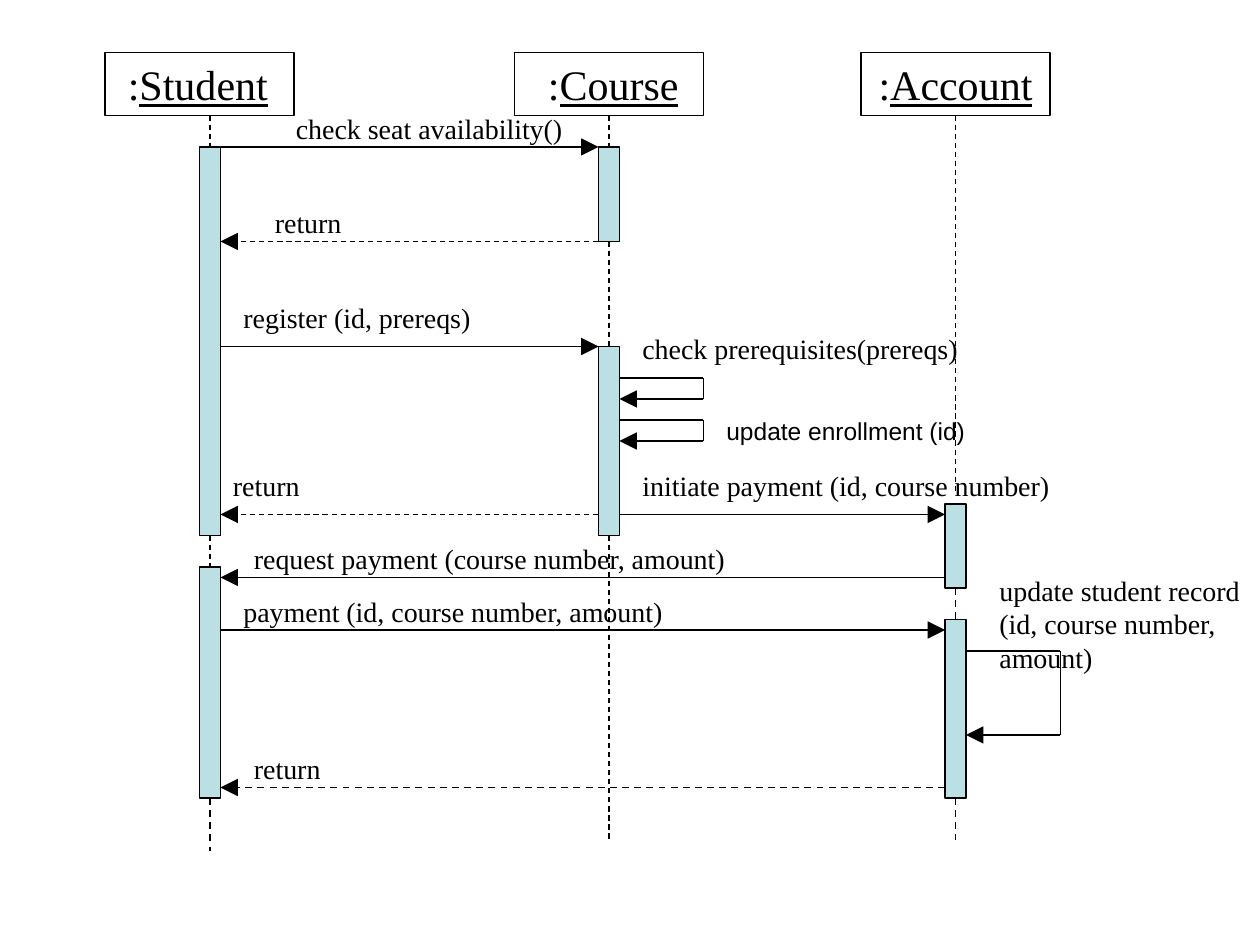
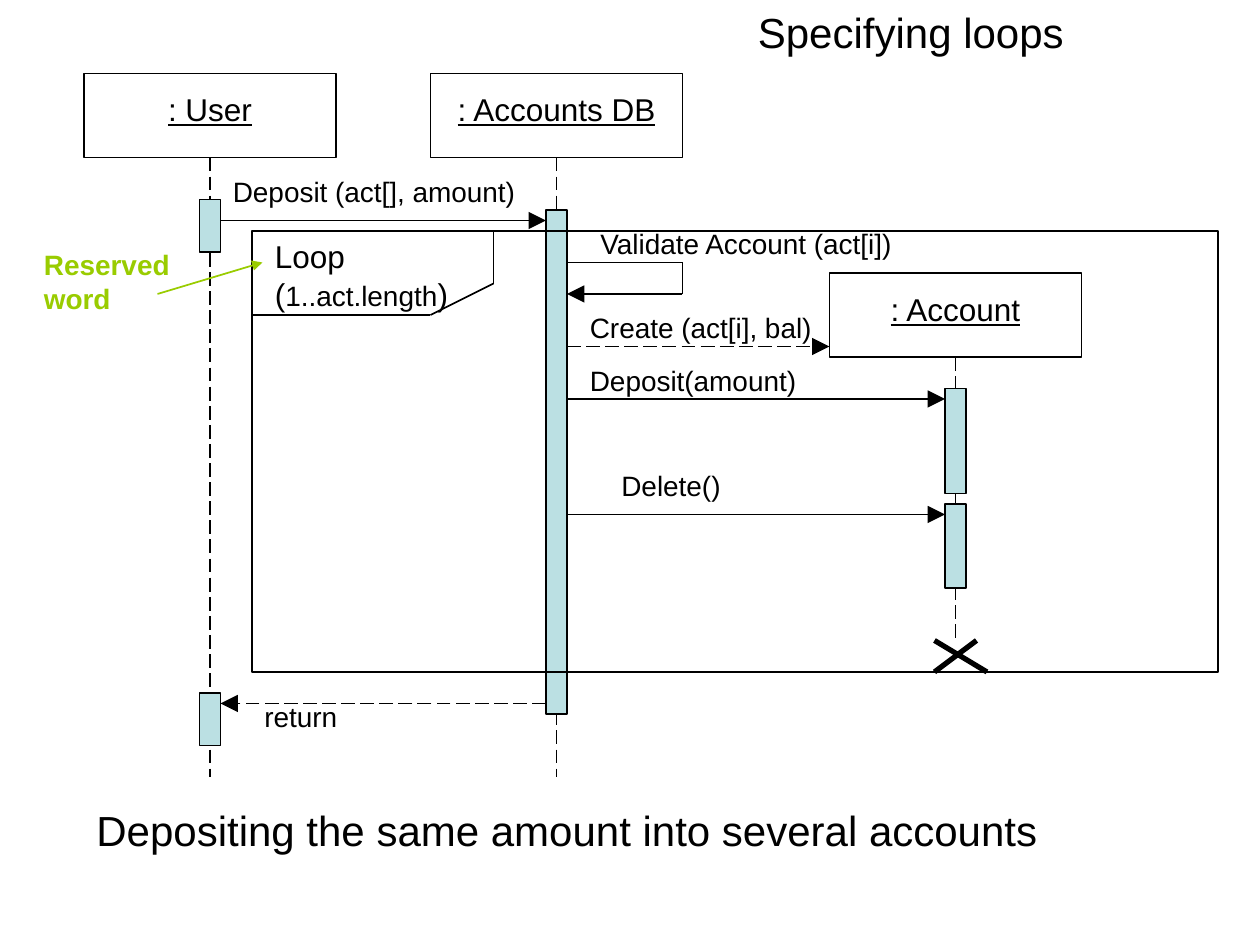
from dataclasses import dataclass
from typing import NamedTuple

from lxml import etree
from pptx import Presentation
from pptx import util as u
from pptx.dml import color
from pptx.enum import dml, shapes, text
from pptx.oxml import ns

SCALE = 9525
BAR_WIDTH = 16
DASH = dml.MSO_LINE.DASH
LONG_DASH = dml.MSO_LINE.LONG_DASH
SIDES = ((0.5, 0), (0, 0.5), (0.5, 1), (1, 0.5))


@dataclass(frozen=True)
class Theme:
    ink: str = "000000"
    bar: str = "BBE0E3"
    accent: str = "99CC00"
    serif: str = "Times New Roman"
    sans: str = "Arial"
    title: int = 24
    head: int = 18
    note: int = 16
    small: int = 14
    hairline: float = 0.75
    line: float = 1
    cross: float = 3


THEME = Theme()


class Box(NamedTuple):
    left: int
    top: int
    width: int
    height: int


def px(value):
    return u.Emu(value * SCALE)


def rgb(value):
    return color.RGBColor.from_string(value)


def assign(target, values):
    for name, value in values.items():
        setattr(target, name, value)


class Canvas:
    def __init__(self, page, box, font, weight, dash, sites=None):
        self.page = page
        self.box = box
        self.font = font
        self.weight = weight
        self.dash = dash
        self.sites = {} if sites is None else sites

    def inside(self, box):
        placed = Box(*self.point(box.left, box.top), box.width, box.height)
        return Canvas(self.page, placed, self.font, self.weight, self.dash, self.sites)

    def point(self, x, y):
        return self.box.left + x, self.box.top + y

    def frame(self, box):
        return [px(value) for value in (*self.point(box.left, box.top), box.width, box.height)]

    def rectangle(self, box, fill=None, weight=None):
        shape = self.page.shapes.add_shape(shapes.MSO_SHAPE.RECTANGLE, *self.frame(box))
        shape.shadow.inherit = False
        if fill:
            shape.fill.solid()
            shape.fill.fore_color.rgb = rgb(fill)
        else:
            shape.fill.background()
        shape.line.color.rgb = rgb(THEME.ink)
        shape.line.width = u.Pt(weight or self.weight)
        for side, (across, down) in enumerate(SIDES):
            spot = self.point(box.left + box.width * across, box.top + box.height * down)
            self.sites[spot] = shape, side
        return shape

    def line(self, start, end, weight=None, dash=None, arrow=None, ink=THEME.ink):
        start, end = self.point(*start), self.point(*end)
        link = self.page.shapes.add_connector(
            shapes.MSO_CONNECTOR.STRAIGHT, *[px(value) for value in start + end])
        link.line.color.rgb = rgb(ink)
        assign(link.line, {"width": u.Pt(weight or self.weight), "dash_style": dash})
        properties = link._element.spPr
        if arrow:
            outline = properties.find(ns.qn("a:ln"))
            etree.SubElement(outline, ns.qn("a:tailEnd"), type="triangle", w=arrow, len=arrow)
        etree.SubElement(properties, ns.qn("a:effectLst"))
        for spot, join in ((start, link.begin_connect), (end, link.end_connect)):
            if spot in self.sites:
                join(*self.sites[spot])

    def route(self, points, **style):
        for start, end in zip(points, points[1:]):
            self.line(start, end, **style)

    def label(self, box, *spans, **style):
        area = self.page.shapes.add_textbox(*self.frame(box))
        self.fill_text(area.text_frame, spans, **style)
        area.text_frame.auto_size = text.MSO_AUTO_SIZE.SHAPE_TO_FIT_TEXT

    def fill_text(self, frame, spans, size=THEME.note, font=None, ink=THEME.ink,
                  bold=False, align=text.PP_ALIGN.LEFT, wrap=True):
        frame.word_wrap = wrap
        para = frame.paragraphs[0]
        para.alignment = align
        for words, changes in spans:
            span = para.add_run()
            span.text = words
            values = {"name": font or self.font, "size": u.Pt(size), "bold": bold}
            assign(span.font, values | changes)
            span.font.color.rgb = rgb(ink)

    def notes(self, entries, height=35):
        for left, top, width, words in entries:
            self.label(Box(left, top, width, height), (words, {}))

    def bars(self, entries):
        for center, top, height, weight in entries:
            box = Box(center - BAR_WIDTH // 2, top, BAR_WIDTH, height)
            self.rectangle(box, THEME.bar, weight)

    def lifelines(self, entries):
        for x, top, bottom, weight in entries:
            self.line((x, top), (x, bottom), weight, self.dash)

    def messages(self, entries):
        for start, end, y, dashed, weight in entries:
            self.line((start, y), (end, y), weight, self.dash if dashed else None, "lg")

    def self_call(self, box, weight=None):
        right, bottom = box.left + box.width, box.top + box.height
        self.route([(box.left, box.top), (right, box.top), (right, bottom)], weight=weight)
        self.line((right, bottom), (box.left, bottom), weight, arrow="lg")


def enrollment_heads(canvas):
    student, course, account = [
        canvas.rectangle(Box(left, 0, 144, 48)) for left in (0, 312, 576)]
    underline = {"underline": True}
    for left, width, name in ((8, 126, "Student"), (328, 119, "Course")):
        canvas.label(Box(left, 0, width, 48), (":", {}), (name, underline),
                     size=THEME.title, wrap=False)
    canvas.fill_text(account.text_frame, [(":", {}), ("Account", underline)],
                     size=THEME.title, align=text.PP_ALIGN.CENTER, wrap=False)
    account.text_frame.vertical_anchor = text.MSO_ANCHOR.MIDDLE


def enrollment_sequence(page, box):
    canvas = Canvas(page, box, THEME.serif, THEME.hairline, DASH)
    student, course, account = 160, 464, 728
    thin, thick = THEME.hairline, THEME.line
    half = BAR_WIDTH // 2
    enrollment_heads(canvas.inside(Box(80, 40, 720, 48)))
    canvas.bars([
        (student, 112, 296, thin), (student, 432, 176, thin),
        (course, 112, 72, thin), (course, 264, 144, thin),
        (account, 384, 64, thin), (account, 472, 136, thick),
    ])
    canvas.lifelines([
        (student, 88, 112, thin), (student, 408, 432, thin), (student, 608, 648, thick),
        (course, 88, 112, thin), (course, 184, 264, thin), (course, 408, 640, thin),
        (account, 88, 376, thin), (account, 448, 472, thick), (account, 608, 640, thick),
    ])
    canvas.messages([
        (student + half, course - half, 112, False, thin),
        (course - half, student + half, 184, True, thin),
        (student + half, course - half, 264, False, thin),
        (course - half, student + half, 392, True, thin),
        (course + half, account - half, 392, False, thin),
        (account - half, student + half, 440, False, thin),
        (student + half, account - half, 480, False, thin),
        (account - half, student + half, 600, True, thick),
    ])
    canvas.self_call(Box(course + half, 288, 64, 16))
    canvas.self_call(Box(course + half, 320, 64, 16), thick)
    canvas.self_call(Box(account + half, 496, 72, 64), thick)
    canvas.notes([
        (216, 80, 240, "check seat availability()"),
        (200, 152, 240, "return"),
        (176, 224, 264, "register (id, prereqs)"),
        (168, 352, 160, "return"),
        (480, 352, 368, "initiate payment (id, course number)"),
        (184, 408, 512, "request payment (course number, amount)"),
        (176, 448, 512, "payment (id, course number, amount)"),
        (480, 248, 296, "check prerequisites(prereqs)"),
        (184, 568, 112, "return"),
    ])
    canvas.notes([(752, 432, 208, "update student record (id, course number, amount)")], 86)
    canvas.label(Box(544, 312, 240, 32), ("update enrollment (id)", {}),
                 size=THEME.small, font=THEME.sans)


def deposit_head(canvas, name):
    canvas.rectangle(Box(0, 0, canvas.box.width, canvas.box.height))
    canvas.label(Box(8, 8, canvas.box.width - 16, 38), (name, {"underline": True}),
                 size=THEME.head, align=text.PP_ALIGN.CENTER)


def loop_frame(canvas):
    canvas.rectangle(Box(0, 0, canvas.box.width, canvas.box.height))
    canvas.route([(0, 64), (136, 64), (184, 40), (184, 0)])
    canvas.label(Box(8, 0, 152, 67), ("Loop (", {}),
                 ("1..act.length", {"size": u.Pt(THEME.note)}), (")", {}), size=THEME.head)


def deposit_sequence(page, box):
    canvas = Canvas(page, box, THEME.sans, THEME.line, LONG_DASH)
    user, database, account = 160, 424, 728
    weight = THEME.line
    half = BAR_WIDTH // 2
    for center, top, name in ((user, 56, ": User"), (database, 56, ": Accounts DB"),
                              (account, 208, ": Account")):
        deposit_head(canvas.inside(Box(center - 96, top, 192, 64)), name)
    canvas.lifelines([
        (user, 120, 592, weight), (database, 120, 592, weight), (account, 272, 488, weight)])
    canvas.bars([
        (user, 152, 40, weight), (user, 528, 40, weight), (database, 160, 384, weight),
        (account, 296, 80, weight), (account, 384, 64, weight),
    ])
    canvas.messages([
        (user + half, database - half, 168, False, weight),
        (database + half, account - 96, 264, True, weight),
        (database + half, account - half, 304, False, weight),
        (database + half, account - half, 392, False, weight),
        (database - half, user + half, 536, True, weight),
    ])
    canvas.self_call(Box(database + half, 200, 88, 24))
    canvas.line((712, 512), (744, 488), THEME.cross)
    canvas.line((712, 488), (752, 512), THEME.cross)
    loop_frame(canvas.inside(Box(192, 176, 736, 336)))
    canvas.notes([
        (168, 128, 248, "Deposit (act[], amount)"),
        (448, 168, 256, "Validate Account (act[i])"),
        (440, 232, 192, "Create (act[i], bal)"),
        (440, 272, 240, "Deposit(amount)"),
        (464, 352, 152, "Delete()"),
        (192, 528, 176, "return"),
    ])
    canvas.label(Box(24, 184, 120, 61), ("Reserved word", {}), ink=THEME.accent, bold=True)
    canvas.line((120, 224), (200, 200), arrow="med", ink=THEME.accent)
    canvas.label(Box(568, 0, 376, 48), ("Specifying loops", {}), size=THEME.title)
    canvas.label(Box(64, 608, 792, 48),
                 ("Depositing the same amount into several accounts", {}), size=THEME.title)


def main():
    deck = Presentation()
    area = Box(0, 0, 960, 720)
    assign(deck, {"slide_width": px(area.width), "slide_height": px(area.height)})
    for draw in (enrollment_sequence, deposit_sequence):
        draw(deck.slides.add_slide(deck.slide_layouts[6]), area)
    deck.save("out.pptx")


if __name__ == "__main__":
    main()
